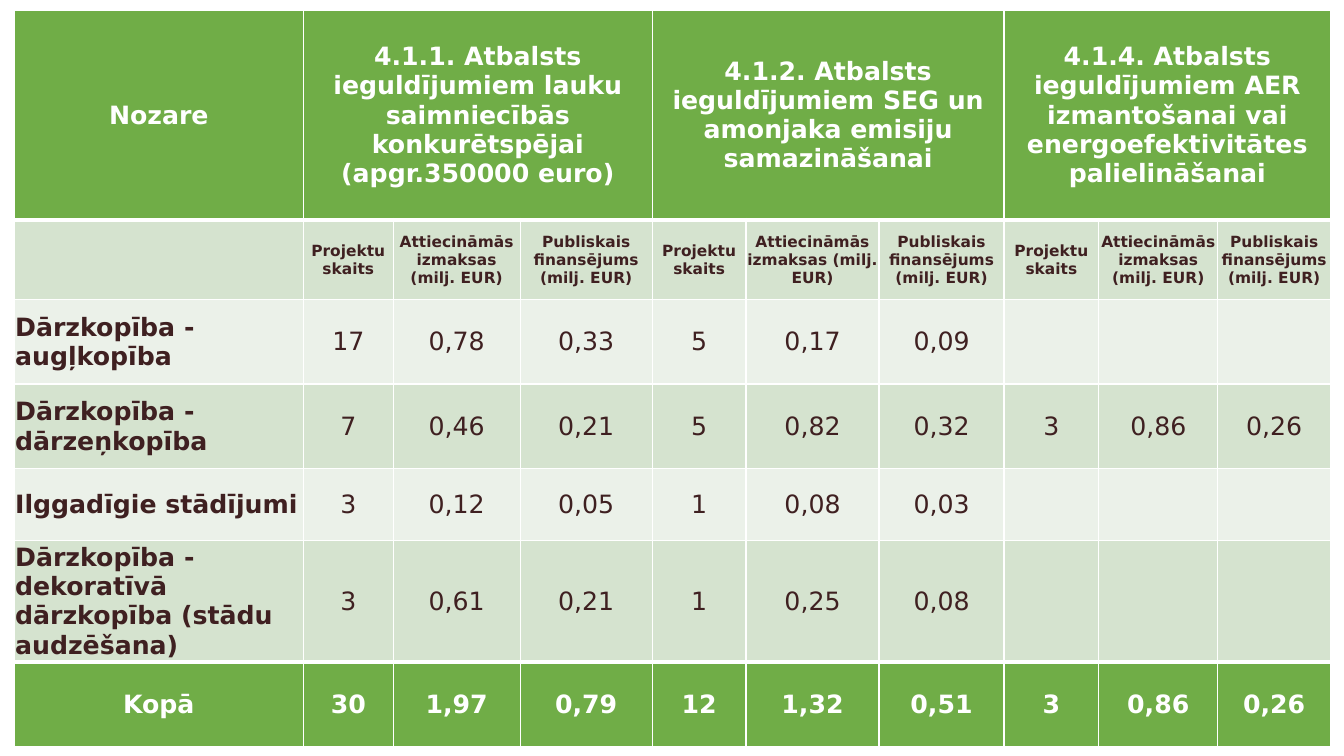
from lxml.etree import SubElement
from pptx import Presentation
from pptx.dml.color import RGBColor
from pptx.enum.text import MSO_ANCHOR, PP_ALIGN
from pptx.oxml.ns import qn
from pptx.util import Inches, Pt

# Content
SECTOR_HEADING = "Nozare"
MEASURES = [
    "4.1.1. Atbalsts ieguldījumiem lauku saimniecībās konkurētspējai (apgr.350000 euro)",
    "4.1.2. Atbalsts ieguldījumiem SEG un amonjaka emisiju samazināšanai",
    "4.1.4. Atbalsts ieguldījumiem AER izmantošanai vai energoefektivitātes palielināšanai",
]
INDICATORS = [
    "Projektu skaits",
    "Attiecināmās izmaksas (milj. EUR)",
    "Publiskais finansējums (milj. EUR)",
]
NO_PROJECTS = ["", "", ""]
SECTORS = [
    ["Dārzkopība - augļkopība", "17", "0,78", "0,33", "5", "0,17", "0,09", *NO_PROJECTS],
    ["Dārzkopība - dārzeņkopība", "7", "0,46", "0,21", "5", "0,82", "0,32", "3", "0,86", "0,26"],
    ["Ilggadīgie stādījumi", "3", "0,12", "0,05", "1", "0,08", "0,03", *NO_PROJECTS],
    ["Dārzkopība - dekoratīvā dārzkopība (stādu audzēšana)",
     "3", "0,61", "0,21", "1", "0,25", "0,08", *NO_PROJECTS],
]
TOTALS = ["Kopā", "30", "1,97", "0,79", "12", "1,32", "0,51", "3", "0,86", "0,26"]

# Grid and style
LEFT, TOP = 0.14, 0.1
COLUMN_WIDTHS = [2.87, 0.89, 1.26, 1.31, 0.93, 1.32, 1.24, 0.94, 1.18, 1.12]
ROW_HEIGHTS = [2.08, 0.79, 0.84, 0.84, 0.71, 1.21, 0.84]
FONT = "DejaVu Sans"
WHITE = RGBColor(0xFF, 0xFF, 0xFF)
GREEN = RGBColor(0x70, 0xAD, 0x47)
BAND_DARK = RGBColor(0xD5, 0xE3, 0xCF)
BAND_LIGHT = RGBColor(0xEB, 0xF1, 0xE9)
BROWN = RGBColor(0x3F, 0x20, 0x21)


def write(cell, text, size=18, color=BROWN, bold=False, align=PP_ALIGN.CENTER):
    cell.vertical_anchor = MSO_ANCHOR.MIDDLE
    cell.margin_left = cell.margin_right = cell.margin_top = Inches(0.01)
    cell.margin_bottom = 0
    paragraph = cell.text_frame.paragraphs[0]
    paragraph.alignment = align
    run = paragraph.add_run()
    run.text = text
    run.font.name = FONT
    run.font.size = Pt(size)
    run.font.bold = bold
    run.font.color.rgb = color


def paint(cell, fill, top=1, bottom=1):
    """Draw white borders, then the fill, in schema order."""
    properties = cell._tc.get_or_add_tcPr()
    for side, width in (("L", 1), ("R", 1), ("T", top), ("B", bottom)):
        border = SubElement(properties, qn(f"a:ln{side}"), w=str(Pt(width)))
        solid = SubElement(border, qn("a:solidFill"))
        SubElement(solid, qn("a:srgbClr"), val=str(WHITE))
    cell.fill.solid()
    cell.fill.fore_color.rgb = fill


prs = Presentation()
prs.slide_width, prs.slide_height = Inches(13.33), Inches(7.5)
slide = prs.slides.add_slide(prs.slide_layouts[6])

# Rows from heading to totals; each measure covers one column per indicator
heading = [SECTOR_HEADING]
for measure in MEASURES:
    heading += [measure] + [""] * (len(INDICATORS) - 1)
rows = [heading, [""] + INDICATORS * len(MEASURES), *SECTORS, TOTALS]
last = len(rows) - 1

table = slide.shapes.add_table(
    len(rows), len(COLUMN_WIDTHS), Inches(LEFT), Inches(TOP),
    Inches(sum(COLUMN_WIDTHS)), Inches(sum(ROW_HEIGHTS))).table
for column, width in zip(table.columns, COLUMN_WIDTHS):
    column.width = Inches(width)
for row, height in zip(table.rows, ROW_HEIGHTS):
    row.height = Inches(height)

# Cells
for r, texts in enumerate(rows):
    accent = r in (0, last)
    band = BAND_DARK if r % 2 else BAND_LIGHT
    for c, text in enumerate(texts):
        cell = table.cell(r, c)
        paint(cell, GREEN if accent else band,
              top=3 if r in (1, last) else 1,
              bottom=3 if r in (0, last - 1) else 1)
        if text:
            sector_name = c == 0 and not accent
            write(cell, text,
                  size=11 if r == 1 else 18,
                  color=WHITE if accent else BROWN,
                  bold=accent or r == 1 or sector_name,
                  align=PP_ALIGN.LEFT if sector_name else PP_ALIGN.CENTER)

# Measure headings span their indicators
span = len(INDICATORS)
for first in range(1, len(COLUMN_WIDTHS), span):
    table.cell(0, first).merge(table.cell(0, first + span - 1))

prs.save("out.pptx")
